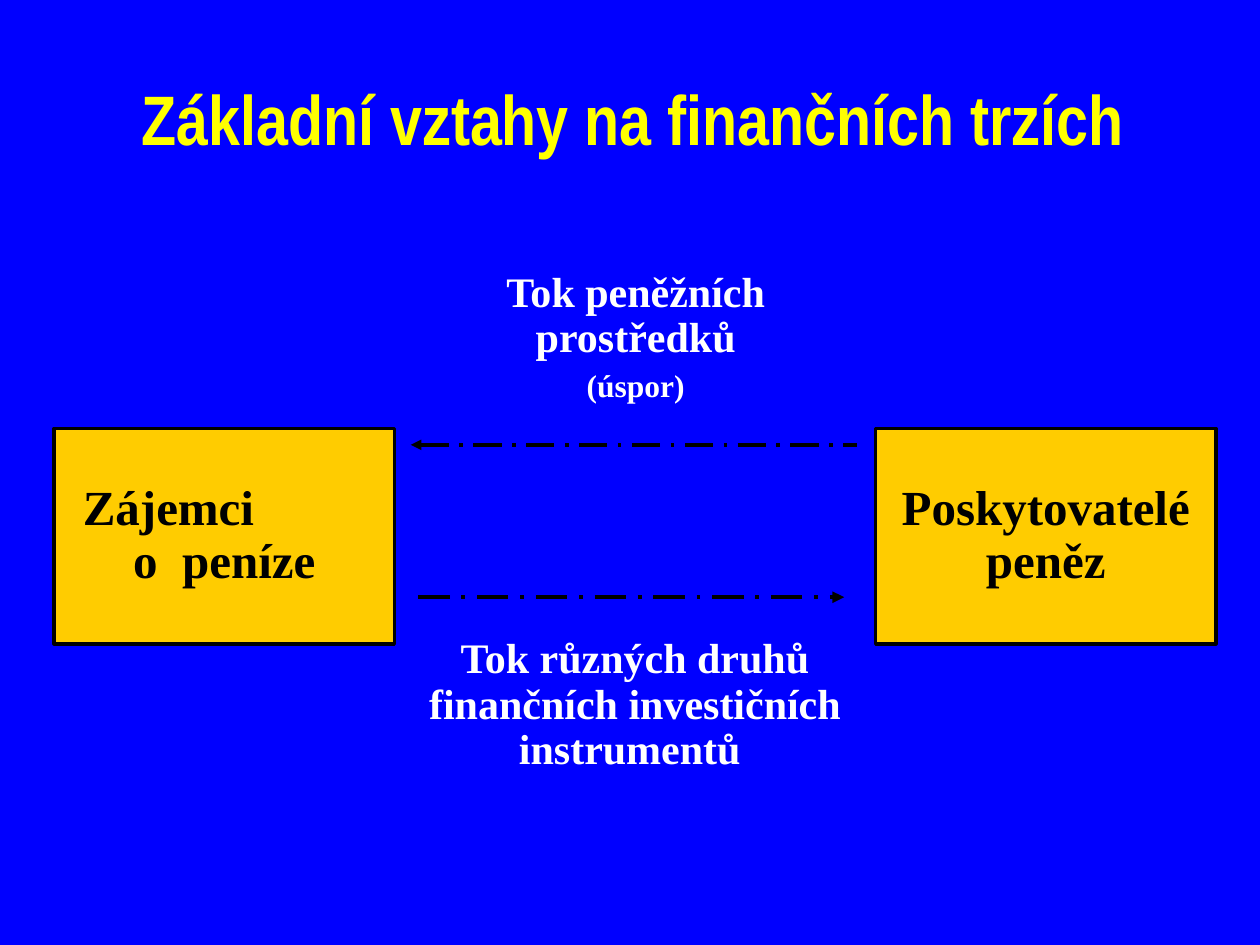
from dataclasses import dataclass

from pptx import Presentation
from pptx.dml.color import RGBColor
from pptx.enum.dml import MSO_LINE
from pptx.enum.shapes import MSO_CONNECTOR, MSO_SHAPE
from pptx.enum.text import MSO_ANCHOR, MSO_AUTO_SIZE, PP_ALIGN
from pptx.oxml.ns import qn
from pptx.util import Inches, Pt
from lxml.etree import SubElement


@dataclass(frozen=True)
class Theme:
    background: RGBColor = RGBColor(0x00, 0x00, 0xFF)
    title: RGBColor = RGBColor(0xFF, 0xFF, 0x00)
    label: RGBColor = RGBColor(0xFF, 0xFF, 0xFF)
    box: RGBColor = RGBColor(0xFF, 0xCC, 0x00)
    ink: RGBColor = RGBColor(0x00, 0x00, 0x00)
    title_font: str = "Arial Narrow"
    body_font: str = "Times New Roman"
    title_size: int = 40
    box_size: int = 28
    label_size: int = 24
    note_size: int = 18


THEME = Theme()
BOX_TOP, BOX_WIDTH, BOX_HEIGHT = 3.4, 2.7, 1.71


def style(p, font, size, color, align=PP_ALIGN.CENTER):
    p.alignment = align
    p.font.name = font
    p.font.size = Pt(size)
    p.font.bold = True
    p.font.color.rgb = color


def add_title(s, text):
    sp = s.shapes.title
    sp.left, sp.top, sp.width, sp.height = map(Inches, (0.91, 0.3, 8.35, 1.26))
    tf = sp.text_frame
    tf.text = text
    tf.auto_size = MSO_AUTO_SIZE.NONE
    tf.vertical_anchor = MSO_ANCHOR.MIDDLE
    style(tf.paragraphs[0], THEME.title_font, THEME.title_size, THEME.title)


def add_label(s, left, top, width, height, text, space_before=0):
    tf = s.shapes.add_textbox(*map(Inches, (left, top, width, height))).text_frame
    tf.word_wrap = True
    p = tf.paragraphs[0]
    p.text = text
    p.line_spacing = 0.9
    p.space_before = Pt(space_before)
    style(p, THEME.body_font, THEME.label_size, THEME.label)
    return tf


def add_note(tf, text):
    p = tf.add_paragraph()
    p.text = text
    p.line_spacing = 0.85
    p.space_before = Pt(6)
    style(p, THEME.body_font, THEME.note_size, THEME.label)


def add_box(s, left, lines):
    sp = s.shapes.add_shape(
        MSO_SHAPE.RECTANGLE, *map(Inches, (left, BOX_TOP, BOX_WIDTH, BOX_HEIGHT)))
    sp.shadow.inherit = False
    sp.fill.solid()
    sp.fill.fore_color.rgb = THEME.box
    sp.line.color.rgb = THEME.ink
    sp.line.width = Pt(2)
    tf = sp.text_frame
    tf.word_wrap = True
    tf.vertical_anchor = MSO_ANCHOR.MIDDLE
    for i, (text, align) in enumerate(lines):
        p = tf.add_paragraph() if i else tf.paragraphs[0]
        p.text = text
        p.line_spacing = 0.9
        style(p, THEME.body_font, THEME.box_size, THEME.ink, align)
    return tf


def add_flow(s, x1, x2, y, width, arrow_end):
    c = s.shapes.add_connector(
        MSO_CONNECTOR.STRAIGHT, *map(Inches, (x1, y, x2, y)))
    c.line.color.rgb = THEME.ink
    c.line.width = Pt(width)
    c.line.dash_style = MSO_LINE.LONG_DASH_DOT
    SubElement(c.line._get_or_add_ln(), qn(arrow_end), type="triangle")
    SubElement(c._element.spPr, qn("a:effectLst"))


def main():
    prs = Presentation()
    prs.slide_width, prs.slide_height = Inches(10), Inches(7.5)
    s = prs.slides.add_slide(prs.slide_layouts[5])
    s.background.fill.solid()
    s.background.fill.fore_color.rgb = THEME.background

    add_title(s, "Základní vztahy na finančních trzích ")
    tf = add_label(s, 3.74, 2.1, 2.61, 1.35, "Tok peněžních prostředků")
    add_note(tf, "(úspor)")
    add_label(s, 3.19, 5.01, 3.7, 1.18,
              "Tok různých druhů finančních investičních instrumentů ", 3)

    add_box(s, 6.95, [("Poskytovatelé peněz", PP_ALIGN.CENTER)])
    add_flow(s, 3.26, 6.8, 3.53, 2, "a:headEnd")
    add_flow(s, 3.32, 6.7, 4.74, 2.25, "a:tailEnd")
    tf = add_box(s, 0.43, [("Zájemci", PP_ALIGN.LEFT),
                           ("o  peníze", PP_ALIGN.CENTER)])
    tf.paragraphs[0]._p.get_or_add_pPr().set("marL", str(Inches(0.13)))

    prs.save("out.pptx")


if __name__ == "__main__":
    main()
